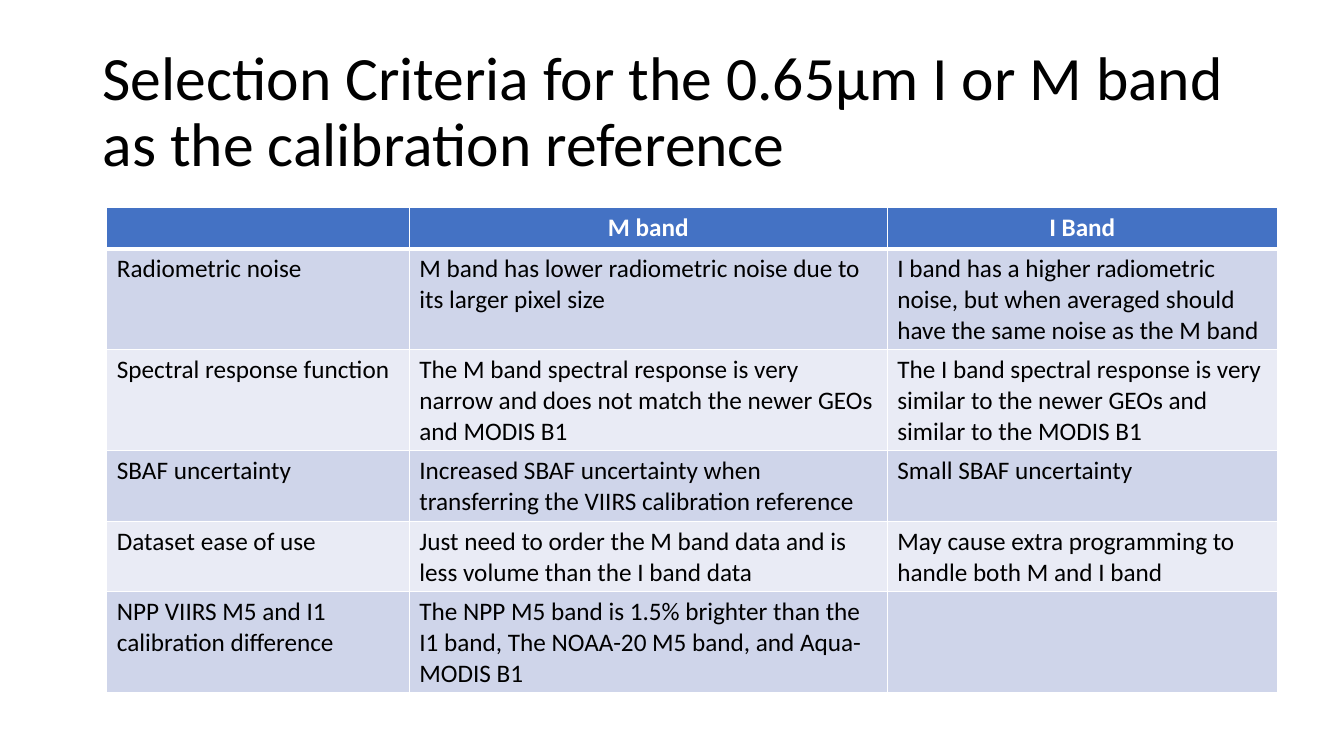
from dataclasses import dataclass

from lxml import etree
from pptx import Presentation
from pptx import util as u
from pptx.dml.color import RGBColor
from pptx.enum import text
from pptx.oxml import ns


@dataclass(frozen=True)
class Theme:
    font: str = "Calibri"
    title_size: int = 44
    cell_size: int = 18
    ink: str = "000000"
    paper: str = "FFFFFF"
    header: str = "4472C4"
    bands: tuple = ("CFD5EA", "E9EBF5")
    thin: int = 1
    thick: int = 3


class SlideBuilder:
    def __init__(self, page, theme):
        self.page = page
        self.theme = theme

    def add_run(self, para, wording, size, color, bold=False):
        span = para.add_run()
        span.text = wording
        span.font.name = self.theme.font
        span.font.size = u.Pt(size)
        span.font.bold = bold
        span.font.color.rgb = RGBColor.from_string(color)

    def add_title(self, wording, left, top, width, height):
        box = self.page.shapes.add_textbox(*map(u.Inches, (left, top, width, height)))
        frame = box.text_frame
        frame.word_wrap = True
        frame.vertical_anchor = text.MSO_ANCHOR.MIDDLE
        para = frame.paragraphs[0]
        para.line_spacing = 0.9
        self.add_run(para, wording, self.theme.title_size, self.theme.ink)

    def add_border(self, cell, side, points):
        """Draw one cell edge; side is L, R, T or B."""
        properties = cell._tc.get_or_add_tcPr()
        line = etree.SubElement(properties, ns.qn(f"a:ln{side}"), w=str(u.Pt(points)))
        fill = etree.SubElement(line, ns.qn("a:solidFill"))
        etree.SubElement(fill, ns.qn("a:srgbClr"), val=self.theme.paper)

    def fill_cell(self, cell, wording, row):
        theme = self.theme
        is_header = row == 0
        edges = {
            "L": theme.thin,
            "R": theme.thin,
            "T": theme.thick if row == 1 else theme.thin,
            "B": theme.thick if is_header else theme.thin,
        }
        for side, points in edges.items():
            self.add_border(cell, side, points)
        cell.fill.solid()
        color = theme.header if is_header else theme.bands[(row - 1) % 2]
        cell.fill.fore_color.rgb = RGBColor.from_string(color)
        para = cell.text_frame.paragraphs[0]
        if is_header:
            para.alignment = text.PP_ALIGN.CENTER
        if wording:
            ink = theme.paper if is_header else theme.ink
            self.add_run(para, wording, theme.cell_size, ink, bold=is_header)

    def add_table(self, rows, left, top, widths, row_height):
        """Build a banded table whose rows grow to fit their text."""
        size = (sum(widths), row_height * len(rows))
        frame = self.page.shapes.add_table(
            len(rows), len(widths), *map(u.Inches, (left, top, *size))
        )
        table = frame.table
        for column, width in zip(table.columns, widths):
            column.width = u.Inches(width)
        for row, wordings in enumerate(rows):
            for column, wording in enumerate(wordings):
                self.fill_cell(table.cell(row, column), wording, row)


CRITERIA = [
    ("", "M band", "I Band"),
    (
        "Radiometric noise",
        "M band has lower radiometric noise due to its larger pixel size",
        "I band has a higher radiometric noise, but when averaged should "
        "have the same noise as the M band",
    ),
    (
        "Spectral response function",
        "The M band spectral response is very narrow and does not match "
        "the newer GEOs and MODIS B1",
        "The I band spectral response is very similar to the newer GEOs "
        "and similar to the MODIS B1",
    ),
    (
        "SBAF uncertainty",
        "Increased SBAF uncertainty when transferring the VIIRS calibration reference",
        "Small SBAF uncertainty",
    ),
    (
        "Dataset ease of use",
        "Just need to order the M band data and is less volume than the I band data",
        "May cause extra programming to handle both M and I band",
    ),
    (
        "NPP VIIRS M5 and I1 calibration difference",
        "The NPP M5 band is 1.5% brighter than the I1 band, "
        "The NOAA-20 M5 band, and Aqua-MODIS B1",
        "",
    ),
]


def main():
    deck = Presentation()
    deck.slide_width = u.Inches(13.33)
    deck.slide_height = u.Inches(7.5)
    page = deck.slides.add_slide(deck.slide_layouts[6])
    builder = SlideBuilder(page, Theme())
    builder.add_title(
        "Selection Criteria for the 0.65µm I or M band as the calibration reference",
        0.92, 0.4, 11.5, 1.45,
    )
    builder.add_table(CRITERIA, 1.06, 2.06, (3, 4.74, 3.87), 0.41)
    deck.save("out.pptx")


if __name__ == "__main__":
    main()
